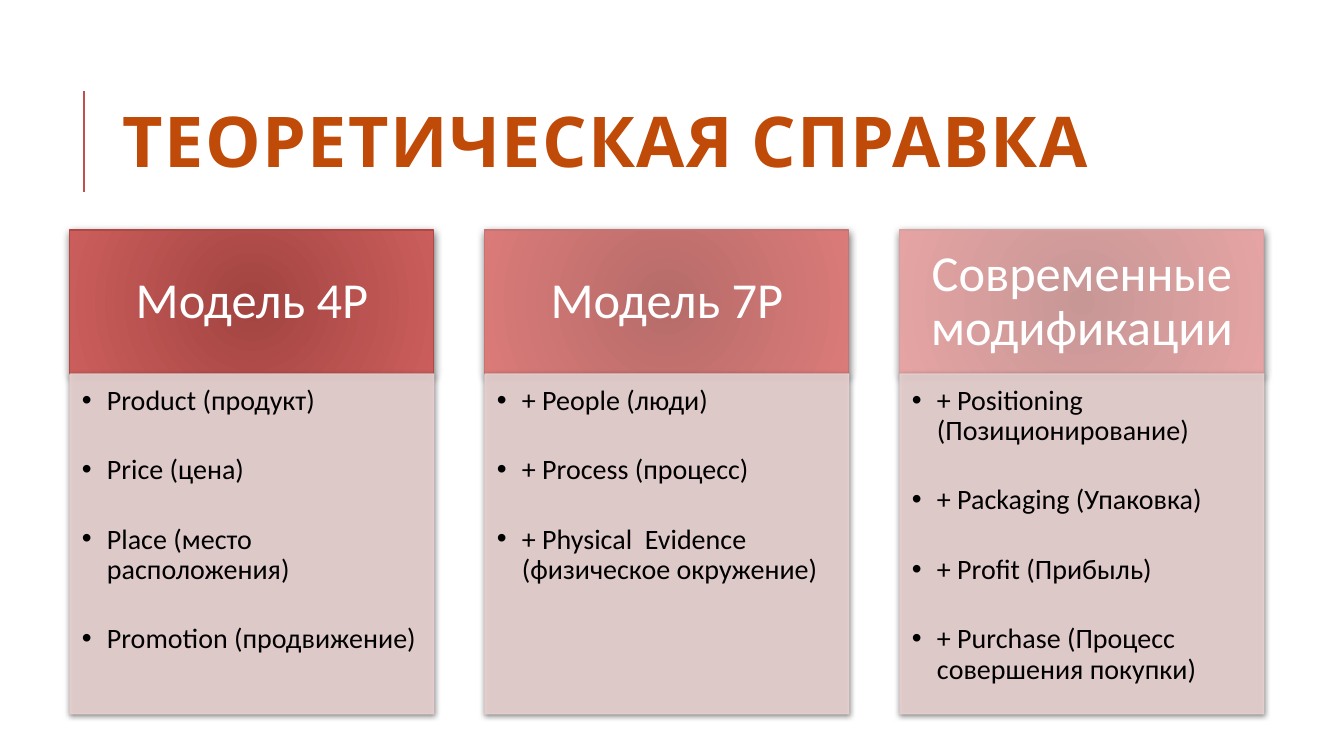
from dataclasses import dataclass

from lxml.etree import SubElement
from pptx import Presentation
from pptx.dml.color import RGBColor
from pptx.enum.shapes import MSO_CONNECTOR, MSO_SHAPE
from pptx.enum.text import MSO_ANCHOR, PP_ALIGN
from pptx.oxml.ns import qn
from pptx.util import Pt

EMU_PER_PX = 914400 / 100.8


@dataclass(frozen=True)
class Theme:
    title: str = "C04A08"
    rule: str = "C0504D"
    header_text: str = "FFFFFF"
    body_text: str = "000000"
    body_fill: str = "E8D0D0"
    shadow: str = "000000"
    title_font: str = "Cabin"
    font: str = "Calibri"
    title_size: int = 50
    header_size: int = 36
    body_size: int = 20


THEME = Theme()

# Column grid, in px
LEFT, PITCH, WIDTH = 70, 415, 364
HEADER_TOP, HEADER_HEIGHT, BODY_HEIGHT = 230, 144, 340

# Heading, gradient centre, gradient edge, outline, items
COLUMNS = [
    ("Модель 4Р", "A24441", "CB5E5C", "AE4946",
     ["Product (продукт)", "Price (цена)", "Place (место расположения)",
      "Promotion (продвижение)"]),
    ("Модель 7Р", "B66C6A", "DB7B79", "C47472",
     ["+ People (люди)", "+ Process (процесс)",
      "+ Physical  Evidence (физическое окружение)"]),
    ("Современные модификации", "C79796", "E5A4A3", "D6A2A1",
     ["+ Positioning (Позиционирование)", "+ Packaging (Упаковка)",
      "+ Profit (Прибыль)", "+ Purchase (Процесс совершения покупки)"]),
]


def px(length):
    return round(length * EMU_PER_PX)


def rgb(value):
    return RGBColor.from_string(value)


def apply(target, formats):
    for attribute, value in formats.items():
        setattr(target, attribute, value)


def set_frame(frame, insets, anchor):
    left, top, right, bottom = map(px, insets)
    apply(frame, {"word_wrap": True, "vertical_anchor": anchor,
                  "margin_left": left, "margin_top": top,
                  "margin_right": right, "margin_bottom": bottom})


def write(paragraph, words, color, font, paragraph_format):
    run = paragraph.add_run()
    run.text = words
    apply(run.font, font)
    run.font.color.rgb = rgb(color)
    apply(paragraph, paragraph_format)
    return run


def add_bullet(paragraph):
    props = paragraph._p.get_or_add_pPr()
    props.set("marL", str(px(25)))
    props.set("indent", str(px(-25)))
    SubElement(props, qn("a:buFont"), typeface="Arial")
    SubElement(props, qn("a:buChar"), char="•")


def add_shadow(panel, opacity, blur, distance):
    panel.shadow.inherit = False
    effects = panel._element.spPr.find(qn("a:effectLst"))
    outer = SubElement(effects, qn("a:outerShdw"), blurRad=str(Pt(blur)),
                       dist=str(Pt(distance)), dir="5400000", rotWithShape="0")
    color = SubElement(outer, qn("a:srgbClr"), val=THEME.shadow)
    SubElement(color, qn("a:alpha"), val=str(opacity * 1000))


def add_panel(slide, left, top, height, outline):
    panel = slide.shapes.add_shape(
        MSO_SHAPE.RECTANGLE, px(left), px(top), px(WIDTH), px(height))
    panel.line.color.rgb = rgb(outline)
    panel.line.width = Pt(0.75)
    return panel


def add_header(slide, left, heading, centre, edge, outline):
    header = add_panel(slide, left, HEADER_TOP, HEADER_HEIGHT, outline)
    header.fill.gradient()
    for stop, color in zip(header.fill.gradient_stops, (centre, edge)):
        stop.color.rgb = rgb(color)

    # Circular gradient spreading from the middle
    gradient = header._element.spPr.find(qn("a:gradFill"))
    gradient.remove(gradient.find(qn("a:lin")))
    circle = SubElement(gradient, qn("a:path"), path="circle")
    SubElement(circle, qn("a:fillToRect"), dict.fromkeys("ltrb", "100000"))
    add_shadow(header, 60, 6, 2)

    set_frame(header.text_frame, (28, 16, 28, 16), MSO_ANCHOR.MIDDLE)
    write(header.text_frame.paragraphs[0], heading, THEME.header_text,
          {"name": THEME.font, "size": Pt(THEME.header_size)},
          {"alignment": PP_ALIGN.CENTER, "line_spacing": 0.9})


def add_body(slide, left, items):
    body = add_panel(slide, left, HEADER_TOP + HEADER_HEIGHT, BODY_HEIGHT,
                     THEME.body_fill)
    body.fill.solid()
    body.fill.fore_color.rgb = rgb(THEME.body_fill)
    for color in body._element.spPr.iter(qn("a:srgbClr")):
        SubElement(color, qn("a:alpha"), val="90000")
    add_shadow(body, 50, 4, 1)

    frame = body.text_frame
    set_frame(frame, (12, 12, 16, 17), MSO_ANCHOR.TOP)
    for number, item in enumerate(items):
        paragraph = frame.add_paragraph() if number else frame.paragraphs[0]
        write(paragraph, item, THEME.body_text,
              {"name": THEME.font, "size": Pt(THEME.body_size)},
              {"alignment": PP_ALIGN.LEFT, "line_spacing": 0.9,
               "space_after": Pt(28)})
        add_bullet(paragraph)


def add_rule(slide):
    rule = slide.shapes.add_connector(
        MSO_CONNECTOR.STRAIGHT, px(84), px(192), px(84), px(91))
    rule.line.color.rgb = rgb(THEME.rule)
    rule.line.width = Pt(1.5)
    SubElement(rule._element.spPr, qn("a:effectLst"))


def add_title(slide, words):
    title = slide.shapes.add_textbox(px(113), px(65), px(1072), px(165))
    set_frame(title.text_frame, (10, 5, 10, 5), MSO_ANCHOR.MIDDLE)
    run = write(title.text_frame.paragraphs[0], words, THEME.title,
                {"name": THEME.title_font, "size": Pt(THEME.title_size),
                 "bold": True},
                {"line_spacing": 0.8})
    run.font._element.set("spc", "100")


def main():
    deck = Presentation()
    deck.slide_width, deck.slide_height = px(1344), px(756)
    slide = deck.slides.add_slide(deck.slide_layouts[6])

    # Title with its vertical rule
    add_rule(slide)
    add_title(slide, "ТЕОРЕТИЧЕСКАЯ СПРАВКА")

    # Three models side by side
    for number, (heading, centre, edge, outline, items) in enumerate(COLUMNS):
        left = LEFT + number * PITCH
        add_header(slide, left, heading, centre, edge, outline)
        add_body(slide, left, items)

    deck.save("out.pptx")


if __name__ == "__main__":
    main()
